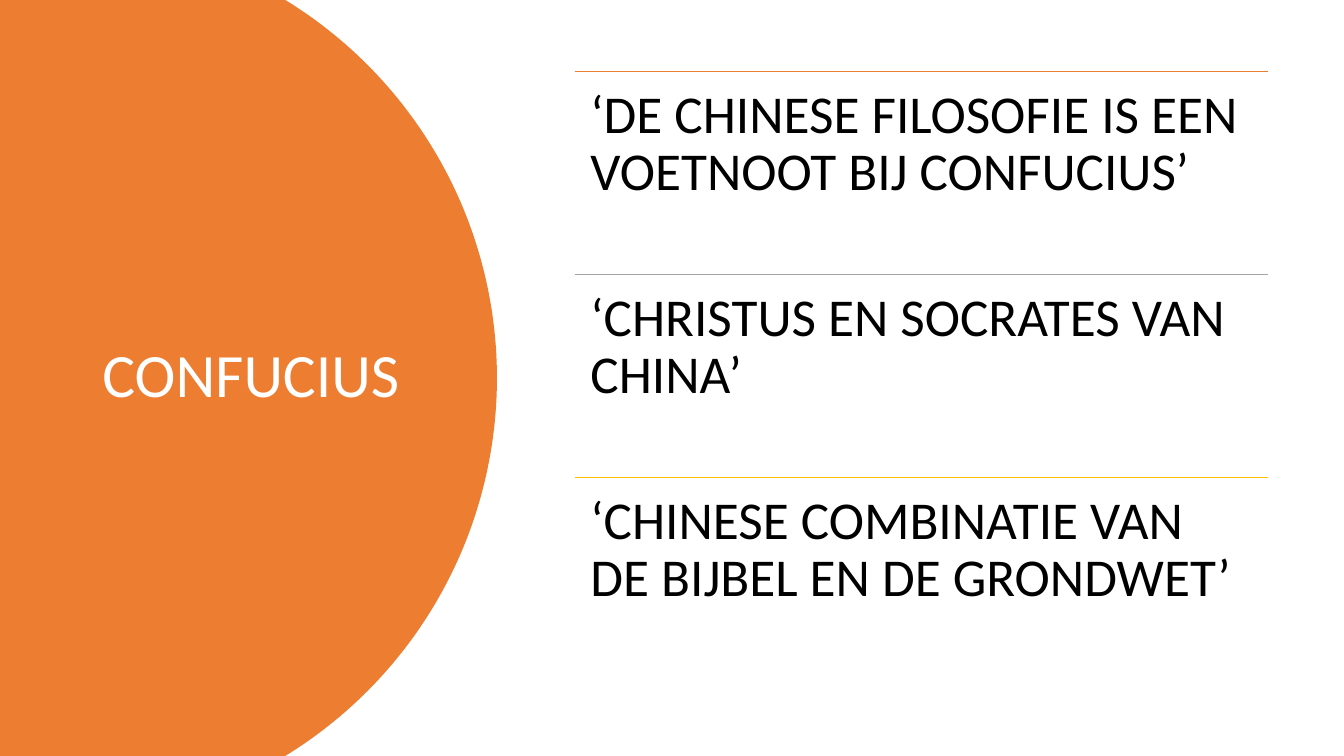
import math

from lxml import etree
from pptx import Presentation
from pptx.dml.color import RGBColor
from pptx.enum import shapes, text
from pptx.oxml import ns
from pptx.util import Pt

ORANGE = RGBColor(0xED, 0x7D, 0x31)
GRAY = RGBColor(0xA5, 0xA5, 0xA5)
GOLD = RGBColor(0xFF, 0xC0, 0x00)
WHITE = RGBColor(0xFF, 0xFF, 0xFF)
BLACK = RGBColor(0x00, 0x00, 0x00)

FONT = "Calibri"
SLIDE_W, SLIDE_H = 960, 540
QUOTES = [
    ("‘DE CHINESE FILOSOFIE IS EEN VOETNOOT BIJ CONFUCIUS’", ORANGE),
    ("‘CHRISTUS EN SOCRATES VAN CHINA’", GRAY),
    ("‘CHINESE COMBINATIE VAN DE BIJBEL EN DE GRONDWET’", GOLD),
]


def write_text(tf, content, size, color, anchor):
    tf.word_wrap = True
    tf.auto_size = text.MSO_AUTO_SIZE.NONE
    tf.vertical_anchor = anchor
    p = tf.paragraphs[0]
    p.alignment = text.PP_ALIGN.LEFT
    p.line_spacing = 0.9
    r = p.add_run()
    r.text = content
    r.font.name = FONT
    r.font.size = Pt(size)
    r.font.color.rgb = color


def add_title_panel(s, x, y, w, h, title):
    """Fill the box with a panel whose right edge is a circular arc, and title it."""
    straight = w * 0.574
    bulge = w - straight
    radius = (bulge ** 2 + (h / 2) ** 2) / (2 * bulge)
    half_angle = math.asin(h / 2 / radius)
    steps = 120
    arc = []
    for i in range(steps + 1):
        angle = half_angle * (2 * i / steps - 1)
        arc.append((Pt(x + w - radius + radius * math.cos(angle)),
                    Pt(y + h / 2 + radius * math.sin(angle))))
    fb = s.shapes.build_freeform(Pt(x), Pt(y))
    fb.add_line_segments(arc + [(Pt(x), Pt(y + h))], close=True)
    panel = fb.convert_to_shape()
    panel.shadow.inherit = False
    panel.fill.solid()
    panel.fill.fore_color.rgb = ORANGE
    panel.line.fill.background()

    sp = s.shapes.title
    sp.element.addprevious(panel.element)
    sp.left, sp.top = Pt(x + 66), Pt(y + 50.5)
    sp.width, sp.height = Pt(232.5), Pt(438.5)
    write_text(sp.text_frame, title, 44, WHITE, text.MSO_ANCHOR.MIDDLE)


def add_quote(s, x, y, w, h, quote, color):
    rule = s.shapes.add_connector(
        shapes.MSO_CONNECTOR.STRAIGHT, Pt(x), Pt(y), Pt(x + w), Pt(y))
    rule.line.color.rgb = color
    rule.line.width = Pt(1)
    etree.SubElement(rule.element.spPr, ns.qn("a:effectLst"))

    tf = s.shapes.add_textbox(Pt(x), Pt(y), Pt(w), Pt(h)).text_frame
    tf.margin_left = tf.margin_right = Pt(11.4)
    tf.margin_top = tf.margin_bottom = Pt(11.4)
    write_text(tf, quote, 38, BLACK, text.MSO_ANCHOR.TOP)


def add_quote_list(s, x, y, w, h, quotes):
    row_h = h / len(quotes)
    for i, (quote, color) in enumerate(quotes):
        add_quote(s, x, y + i * row_h, w, row_h, quote, color)


def main():
    prs = Presentation()
    prs.slide_width, prs.slide_height = Pt(SLIDE_W), Pt(SLIDE_H)
    s = prs.slides.add_slide(prs.slide_layouts.get_by_name("Title Only"))
    add_title_panel(s, 0, 0, 355, SLIDE_H, "CONFUCIUS")
    add_quote_list(s, 410.4, 51, 495.2, 435, QUOTES)
    prs.save("out.pptx")


if __name__ == "__main__":
    main()
